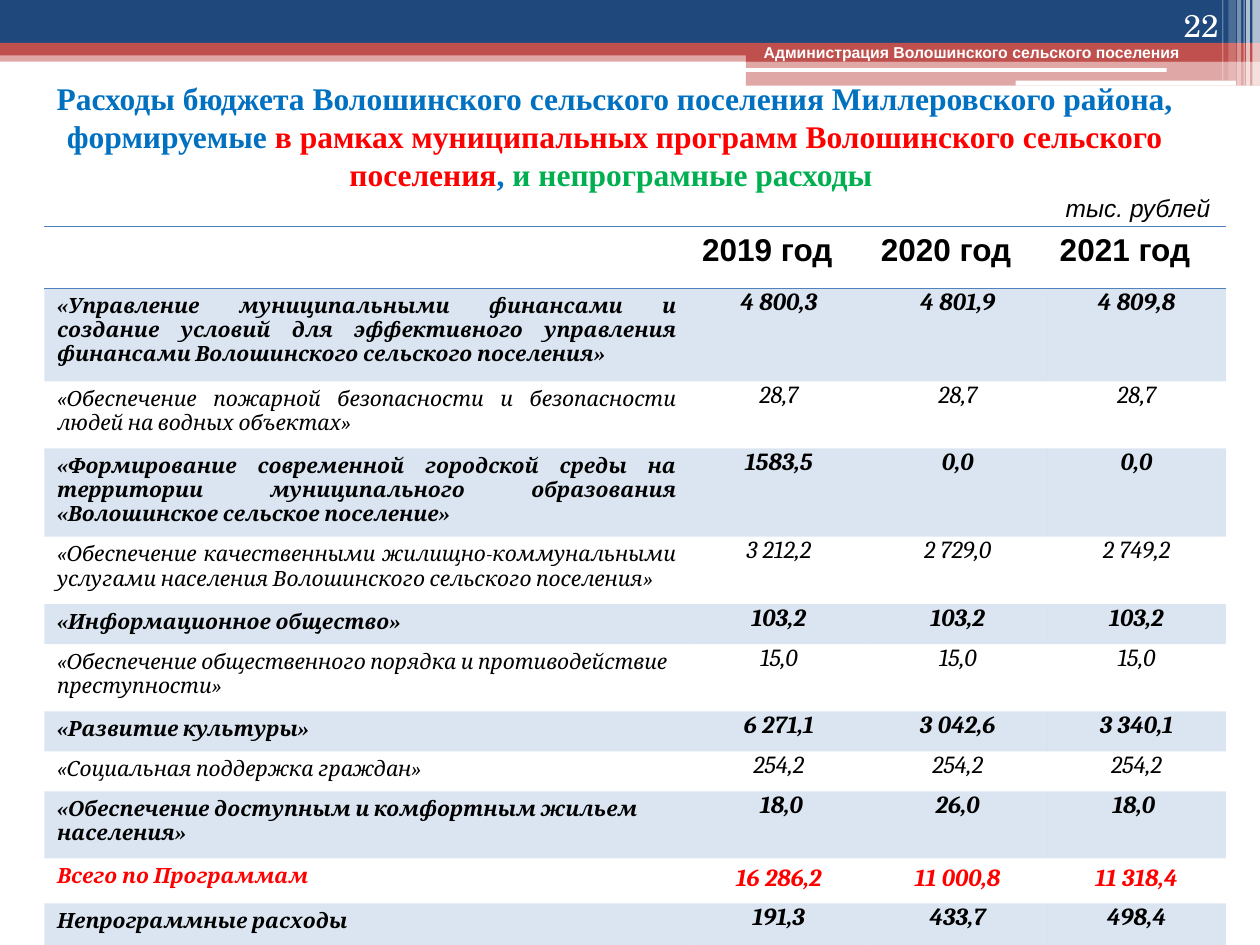
"""Build a slide with the village budget by municipal programme, 2019 to 2021."""
from lxml.etree import SubElement
from pptx import Presentation
from pptx.dml.color import RGBColor
from pptx.enum.shapes import MSO_SHAPE as Preset
from pptx.enum.text import MSO_ANCHOR as Anchor, PP_ALIGN as Align
from pptx.oxml import parse_xml
from pptx.oxml.ns import nsdecls, qn
from pptx.util import Pt

COLORS = {
    "navy": "1F497D", "brick": "C0504D", "white": "FFFFFF", "black": "000000",
    "title": "0070C0", "red": "FF0000", "green": "00B050", "accent": "4F81BD",
}
BANDS = [
    (0, 28.8, 720, 6.5, "brick", 50),
    (0, 0, 720, 24.5, "navy", 100),
    (0, 24.5, 720, 7.2, "brick", 100),
    (426.2, 28.1, 293.8, 7.2, "brick", 100),
    (426.2, 34.6, 293.8, 14.4, "brick", 50),
]
PILLS = [(425.5, 38.9, 241.2, 2.2), (580.3, 46.1, 126, 2.9)]
STRIPES = [
    (715.7, 4.3, 49, 65), (712.1, 2.2, 49, 65), (710.6, 0.7, 49, 60),
    (707, 2.2, 49, 40), (702, 4.3, 46.1, 20), (698.4, 0.7, 46.1, 30),
]
TITLE = [
    ("Расходы бюджета Волошинского сельского поселения Миллеровского района, "
     "формируемые ", "title"),
    ("в рамках муниципальных программ Волошинского сельского поселения", "red"),
    (", ", "title"),
    ("и непрограмные расходы ", "green"),
]
YEARS = ["", "2019 год", "2020 год", "2021 год"]
PROGRAMMES = [
    ("«Управление муниципальными финансами и создание условий для эффективного "
     "управления финансами Волошинского сельского поселения»",
     "4 800,3", "4 801,9", "4 809,8"),
    ("«Обеспечение пожарной безопасности и безопасности людей на водных объектах»",
     "28,7", "28,7", "28,7"),
    ("«Формирование современной городской среды на территории муниципального "
     "образования «Волошинское сельское поселение»", "1583,5", "0,0", "0,0"),
    ("«Обеспечение качественными жилищно-коммунальными услугами населения "
     "Волошинского сельского поселения»", "3 212,2", "2 729,0", "2 749,2"),
    ("«Информационное общество»", "103,2", "103,2", "103,2"),
    ("«Обеспечение общественного порядка и противодействие преступности»",
     "15,0", "15,0", "15,0"),
    ("«Развитие культуры»", "6 271,1", "3 042,6", "3 340,1"),
    ("«Социальная поддержка граждан»", "254,2", "254,2", "254,2"),
    ("«Обеспечение доступным и комфортным жильем населения»",
     " 18,0", "26,0", "18,0 "),
    ("Всего по Программам", "16 286,2", "11 000,8", "11 318,4"),
    ("Непрограммные расходы", "191,3", "433,7", "498,4"),
]
JUSTIFIED_ROWS = 4
TOTAL_ROW = 10
COLUMN_WIDTHS = [368.6, 102.2, 102.2, 102.2]
ROW_HEIGHTS = [35.4, 53.2, 38.3, 48.6, 38.6, 22.9, 38.3, 22.9, 22.9, 38.3, 25.7, 25.7]
PLAIN_TABLE_STYLE = "{2D5ABB26-0587-4C30-8999-92F81FD0307C}"


def rgb(color):
    """Return the named colour."""
    return RGBColor.from_string(COLORS[color])


def set_fill(item, color, opacity=100):
    """Fill a shape or cell, with opacity in percent."""
    item.fill.solid()
    item.fill.fore_color.rgb = rgb(color)
    if opacity < 100:
        element = item.fill._xPr.find(f".//{qn('a:srgbClr')}")
        SubElement(element, qn("a:alpha"), val=str(opacity * 1000))


def set_font(paragraph, name, size, color="black", bold=False, italic=False):
    """Set the font of a whole paragraph."""
    font = paragraph.font
    font.name, font.size = name, Pt(size)
    font.bold, font.italic = bold, italic
    font.color.rgb = rgb(color)


def add_block(page, left, top, width, height, color, opacity=100,
              preset=Preset.RECTANGLE):
    """Add a filled shape without outline."""
    block = page.shapes.add_shape(preset, Pt(left), Pt(top), Pt(width), Pt(height))
    block.shadow.inherit = False
    block.line.fill.background()
    set_fill(block, color, opacity)


def add_text(page, left, top, width, height, spans, align, anchor, **font):
    """Add a one-paragraph text box from (text, colour) spans."""
    box = page.shapes.add_textbox(Pt(left), Pt(top), Pt(width), Pt(height))
    frame = box.text_frame
    frame.word_wrap = True
    frame.vertical_anchor = anchor
    para = frame.paragraphs[0]
    para.alignment = align
    set_font(para, **font)
    for text, color in spans:
        span = para.add_run()
        span.text = text
        span.font.color.rgb = rgb(color)


def add_borders(cell, *sides):
    """Draw thin accent lines on the given cell sides, in schema order."""
    for index, side in enumerate(sides):
        cell._tc.get_or_add_tcPr().insert(index, parse_xml(
            f'<a:{side} {nsdecls("a")} w="12700"><a:solidFill>'
            f'<a:srgbClr val="{COLORS["accent"]}"/></a:solidFill></a:{side}>'))


def fill_cell(cell, text, row, column):
    """Write and format one table cell by its place."""
    cell.text = text
    para = cell.text_frame.paragraphs[0]
    if row == 0:
        set_font(para, "Arial", 18, bold=True)
    else:
        set_font(para, "Cambria", 14 if column else 12,
                 "red" if row == TOTAL_ROW else "black",
                 bold=row % 2 == 1 or row == TOTAL_ROW, italic=True)
        if column:
            para.alignment = Align.CENTER
        elif row <= JUSTIFIED_ROWS:
            para.alignment = Align.JUSTIFY
        if column and row != TOTAL_ROW:
            cell.margin_left = cell.margin_right = Pt(5)
            cell.margin_top = cell.margin_bottom = Pt(0)
    if row % 2:
        set_fill(cell, "accent", 20)
    else:
        cell.fill.background()
    if row == 0:
        add_borders(cell, "lnT", "lnB")
    elif row == len(PROGRAMMES):
        add_borders(cell, "lnB")


def add_budget_table(page):
    """Add the table of spending by programme and year."""
    rows = [YEARS, *PROGRAMMES]
    frame = page.shapes.add_table(
        len(rows), len(YEARS), Pt(25.4), Pt(129.4),
        Pt(sum(COLUMN_WIDTHS)), Pt(sum(ROW_HEIGHTS)))
    table = frame.table
    table.first_row = table.horz_banding = False
    table._tbl.tblPr.find(qn("a:tableStyleId")).text = PLAIN_TABLE_STYLE
    for column, width in zip(table.columns, COLUMN_WIDTHS):
        column.width = Pt(width)
    for row, height in zip(table.rows, ROW_HEIGHTS):
        row.height = Pt(height)
    for row, texts in enumerate(rows):
        for column, text in enumerate(texts):
            fill_cell(table.cell(row, column), text, row, column)


def add_header_band(page):
    """Add the coloured band with its pills and stripes."""
    for band in BANDS:
        add_block(page, *band)
    for pill in PILLS:
        add_block(page, *pill, "white", preset=Preset.ROUNDED_RECTANGLE)
    for left, width, height, opacity in STRIPES:
        add_block(page, left, 0, width, height, "white", opacity)


def main():
    """Build and save the deck."""
    deck = Presentation()
    deck.slide_width, deck.slide_height = Pt(720), Pt(540)
    page = deck.slides.add_slide(deck.slide_layouts[6])
    add_header_band(page)
    add_text(page, 0, 43.2, 702.7, 69.1, TITLE, Align.CENTER, Anchor.MIDDLE,
             name="Times New Roman", size=18, bold=True)
    add_text(page, 643.7, 0, 59.8, 28.8, [("22", "white")], Align.RIGHT,
             Anchor.BOTTOM, name="TeX Gyre Schola", size=18)
    add_budget_table(page)
    add_text(page, 601.9, 106.6, 102.2, 24.5, [("тыс. рублей", "black")],
             Align.LEFT, Anchor.TOP, name="Arial", size=14, italic=True)
    add_text(page, 410.4, 20.9, 289.4, 18,
             [("Администрация Волошинского сельского поселения", "white")],
             Align.CENTER, Anchor.TOP, name="Arial", size=9, bold=True)
    deck.save("out.pptx")


if __name__ == "__main__":
    main()
